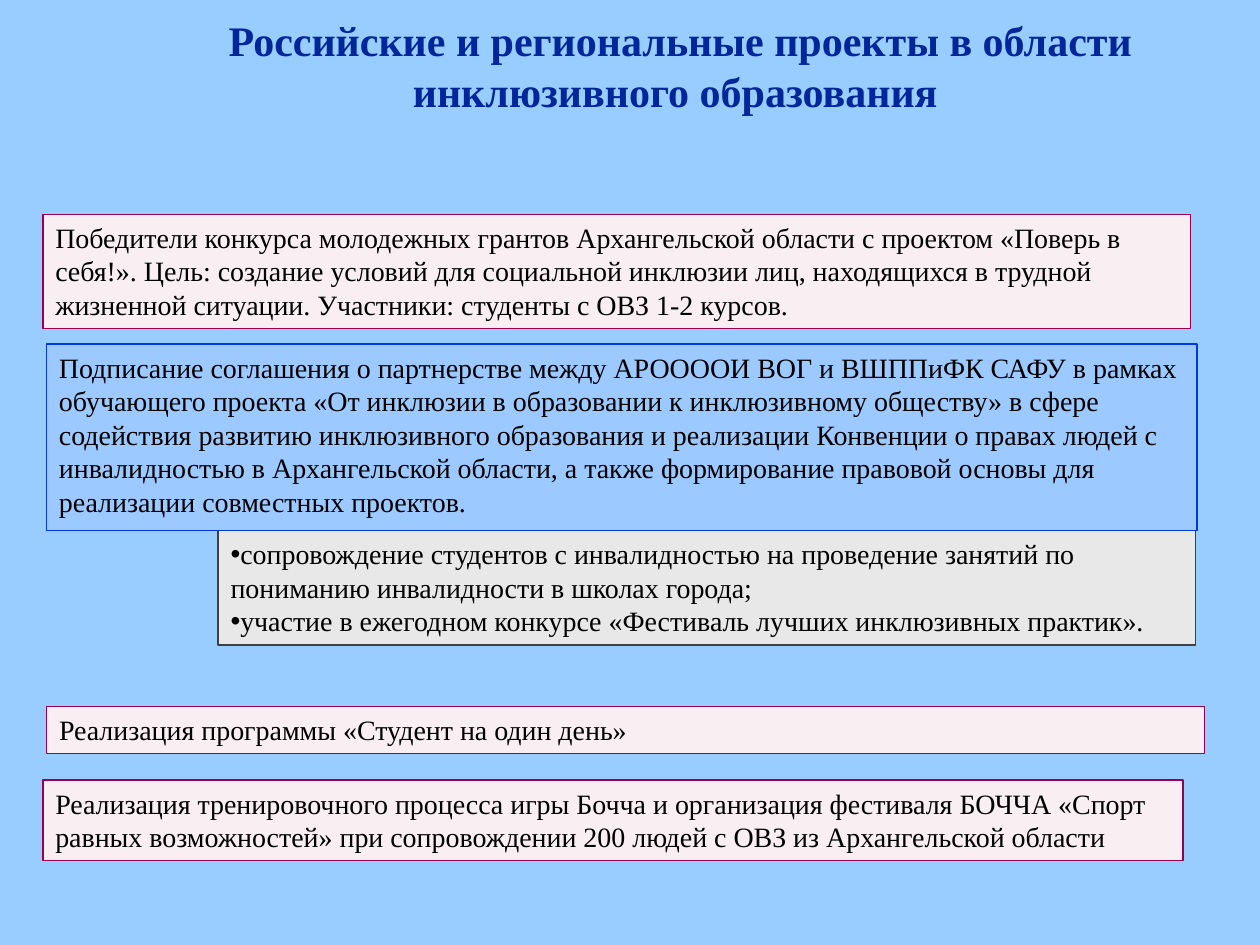
from pptx import Presentation
from pptx.dml.color import RGBColor
from pptx.enum.shapes import MSO_SHAPE
from pptx.enum.text import MSO_ANCHOR, MSO_AUTO_SIZE, PP_ALIGN
from pptx.util import Inches, Pt

WIDTH, HEIGHT = 10, 7.5
FONT = "Times New Roman"
SKY, NAVY, BLACK = "99CCFF", "002699", "000000"
PINK = ("F9EEF1", "99004D")
BLUE = ("9CC9FF", "0039E5")
GREY = ("E8E8E8", "404040")

TITLE = "Российские и региональные проекты в области инклюзивного образования \v"
LIST = [
    "сопровождение студентов с инвалидностью на проведение занятий по "
    "пониманию инвалидности в школах города;",
    "участие в ежегодном конкурсе «Фестиваль лучших инклюзивных практик».",
]
CARDS = [
    ((0.34, 1.7, 9.11, 0.91), PINK,
     "Победители конкурса молодежных грантов Архангельской области с проектом "
     "«Поверь в себя!». Цель: создание условий для социальной инклюзии лиц, "
     "находящихся в трудной жизненной ситуации. Участники: студенты с ОВЗ "
     "1-2 курсов."),
    ((0.37, 2.73, 9.13, 1.48), BLUE,
     "Подписание соглашения о партнерстве между АРООООИ ВОГ и ВШППиФК САФУ в "
     "рамках обучающего проекта «От инклюзии в образовании к инклюзивному "
     "обществу» в сфере содействия развитию инклюзивного образования и "
     "реализации Конвенции о правах людей с инвалидностью в Архангельской "
     "области, а также формирование правовой основы для реализации "
     "совместных проектов."),
    ((0.37, 5.61, 9.19, 0.37), PINK,
     "Реализация программы «Студент на один день»"),
    ((0.34, 6.19, 9.05, 0.64), PINK,
     "Реализация тренировочного процесса игры Бочча и организация фестиваля "
     "БОЧЧА «Спорт равных возможностей» при сопровождении 200 людей с ОВЗ из "
     "Архангельской области"),
]


def color(code):
    return RGBColor.from_string(code)


def place(shape, box):
    shape.left, shape.top, shape.width, shape.height = map(Inches, box)


def paint(shape, pair):
    """Give the shape its fill and thin outline."""
    fill, line = pair
    shape.fill.solid()
    shape.fill.fore_color.rgb = color(fill)
    shape.line.color.rgb = color(line)
    shape.line.width = Pt(0.75)


def write(shape, lines, size=16, ink=BLACK, bold=False,
          align=PP_ALIGN.LEFT, anchor=MSO_ANCHOR.TOP, bullet=False):
    frame = shape.text_frame
    frame.word_wrap = True
    frame.auto_size = MSO_AUTO_SIZE.NONE
    frame.vertical_anchor = anchor
    for i, line in enumerate(lines):
        para = frame.add_paragraph() if i else frame.paragraphs[0]
        para.text = line
        para.alignment = align
        para.space_before = Pt(0)
        if bullet:
            props = para._p.get_or_add_pPr()
            props.set("marL", "0")
            props.set("indent", "0")
        for run in para.runs:
            run.font.name = FONT
            run.font.size = Pt(size)
            run.font.bold = bold
            run.font.color.rgb = color(ink)


def add_title(slide):
    title = slide.shapes.title
    place(title, (1.3, 0.3, 8.2, 1.17))
    write(title, [TITLE], size=24, ink=NAVY, bold=True,
          align=PP_ALIGN.CENTER, anchor=MSO_ANCHOR.MIDDLE)


def add_list(slide):
    body = slide.placeholders[1]
    place(body, (1.73, 4.21, 7.76, 0.91))
    paint(body, GREY)
    write(body, LIST, bullet=True)


def add_card(slide, box, pair, text):
    card = slide.shapes.add_shape(MSO_SHAPE.RECTANGLE, *map(Inches, box))
    card.shadow.inherit = False
    paint(card, pair)
    write(card, [text])


def main():
    deck = Presentation()
    deck.slide_width, deck.slide_height = Inches(WIDTH), Inches(HEIGHT)
    slide = deck.slides.add_slide(deck.slide_layouts[1])
    slide.background.fill.solid()
    slide.background.fill.fore_color.rgb = color(SKY)
    add_title(slide)
    add_list(slide)
    for card in CARDS:
        add_card(slide, *card)
    deck.save("out.pptx")


if __name__ == "__main__":
    main()
